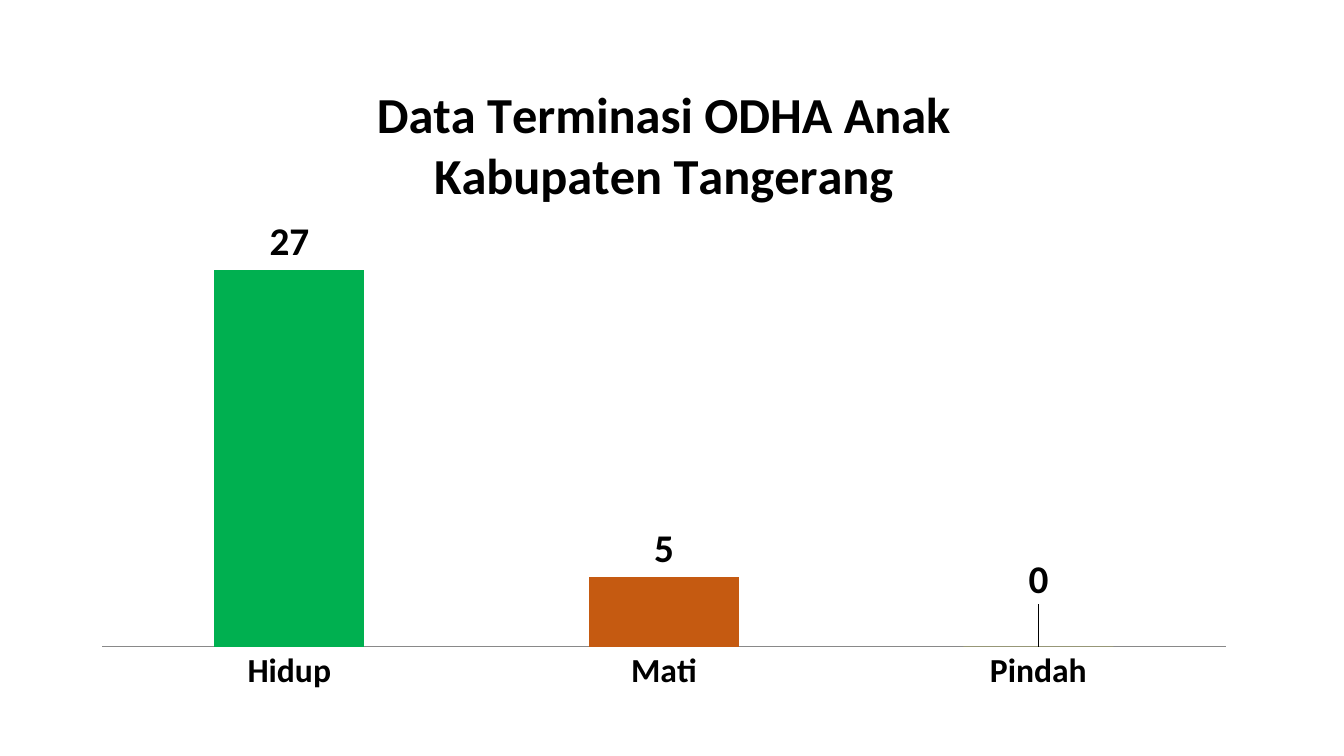
"""Build a slide with a column chart of ODHA Anak terminations in Kabupaten Tangerang."""
import pptx
import pptx.chart.data
import pptx.dml.color
import pptx.enum.chart
import pptx.oxml
import pptx.oxml.ns
import pptx.util

Inches, Pt = pptx.util.Inches, pptx.util.Pt
RGBColor = pptx.dml.color.RGBColor
BLACK = RGBColor(0x00, 0x00, 0x00)
GRAY = RGBColor(0x89, 0x89, 0x89)
BLUE = RGBColor(0x5B, 0x9B, 0xD5)
GREEN = RGBColor(0x00, 0xB0, 0x50)
ORANGE = RGBColor(0xC5, 0x5A, 0x11)
YELLOW = RGBColor(0xFF, 0xFF, 0x00)


def set_font(font, size, bold=True):
    font.name = "Calibri"
    font.size = Pt(size)
    font.bold = bold
    font.color.rgb = BLACK


def make_layout(settings):
    items = "".join(f'<c:{tag} val="{val}"/>' for tag, val in settings.items())
    return pptx.oxml.parse_xml(
        f'<c:layout {pptx.oxml.ns.nsdecls("c")}>'
        f"<c:manualLayout>{items}</c:manualLayout></c:layout>"
    )


prs = pptx.Presentation()
prs.slide_width = Inches(13.33)
prs.slide_height = Inches(7.5)
s = prs.slides.add_slide(prs.slide_layouts[6])

data = pptx.chart.data.CategoryChartData()
data.categories = ["Hidup", "Mati", "Pindah"]
data.add_series("Series 1", [27, 5, 0])
chart = s.shapes.add_chart(
    pptx.enum.chart.XL_CHART_TYPE.COLUMN_CLUSTERED,
    Inches(0.78), Inches(0.61), Inches(11.61), Inches(6.38), data,
).chart
set_font(chart.font, 10, bold=False)
chart.has_legend = False

tf = chart.chart_title.text_frame
for i, line in enumerate(["Data Terminasi ODHA Anak", "Kabupaten Tangerang"]):
    p = tf.add_paragraph() if i else tf.paragraphs[0]
    r = p.add_run()
    r.text = line
    set_font(r.font, 36)
chart.chart_title.include_in_layout = False

axis = chart.category_axis
axis.major_tick_mark = pptx.enum.chart.XL_TICK_MARK.NONE
axis.format.line.color.rgb = GRAY
axis.format.line.width = Pt(0.75)
set_font(axis.tick_labels.font, 24)

axis = chart.value_axis
axis.minimum_scale = 0
axis.maximum_scale = 30
axis.has_major_gridlines = False
axis.visible = False

plot = chart.plots[0]
plot.gap_width = 150
plot.vary_by_categories = False
series = plot.series[0]
series.invert_if_negative = False
series.format.fill.solid()
series.format.fill.fore_color.rgb = BLUE
for i, color in enumerate([GREEN, ORANGE, YELLOW]):
    fill = series.points[i].format.fill
    fill.solid()
    fill.fore_color.rgb = color

above = pptx.enum.chart.XL_LABEL_POSITION.OUTSIDE_END
labels = series.data_labels
labels.show_value = True
labels.position = above
set_font(labels.font, 28)
pindah_label = series.points[2].data_label
pindah_label.position = above
set_font(pindah_label.font, 28)

root = chart.element
root.xpath(".//c:dLbl/c:idx")[0].addnext(make_layout({"x": 0, "y": -0.06}))
plot_area = root.xpath(".//c:plotArea")[0]
for old in plot_area.xpath("./c:layout"):
    plot_area.remove(old)
plot_area.insert(0, make_layout({
    "layoutTarget": "inner", "xMode": "edge", "yMode": "edge",
    "x": 0.02, "y": 0.26, "w": 0.96, "h": 0.65,
}))

prs.save("out.pptx")
